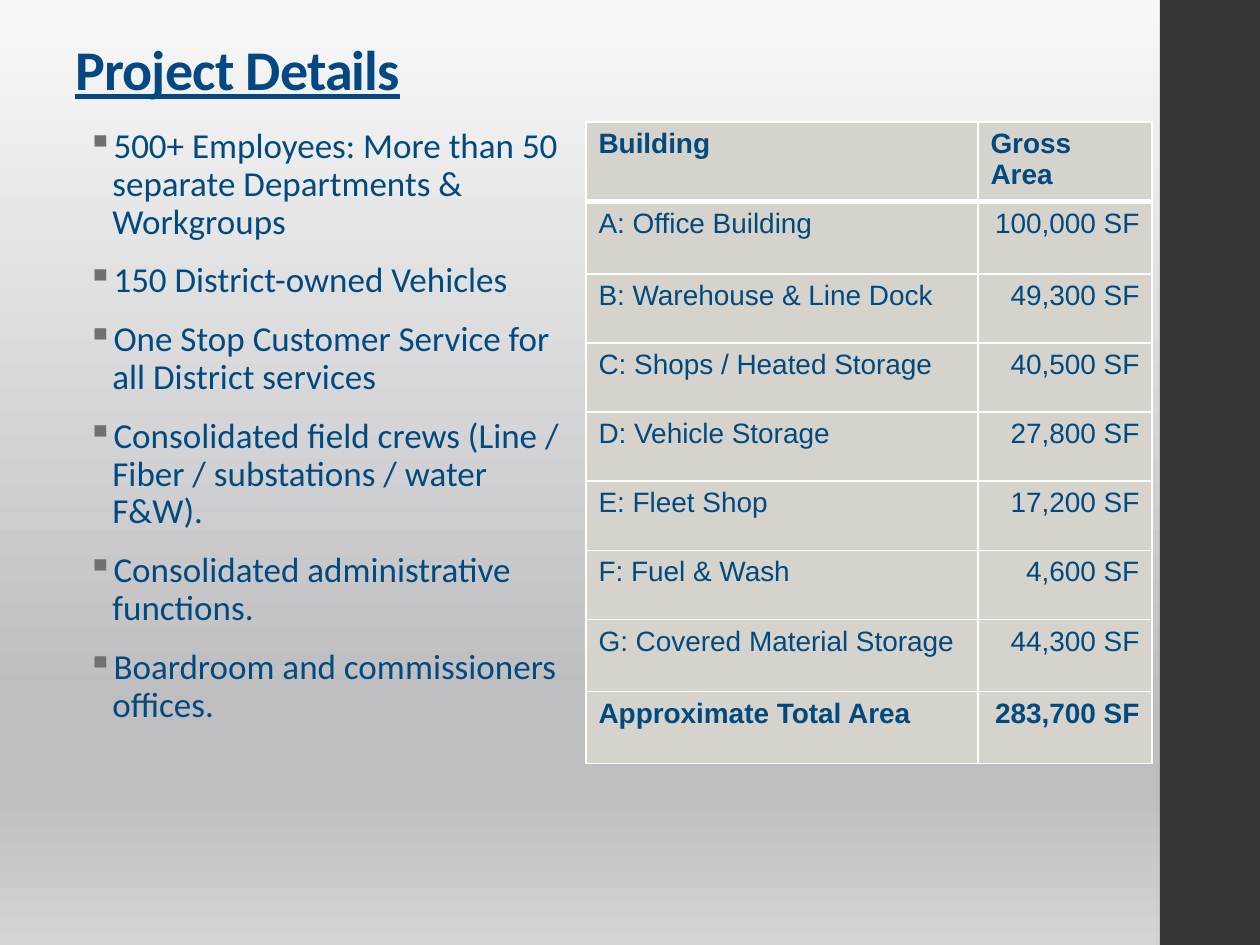
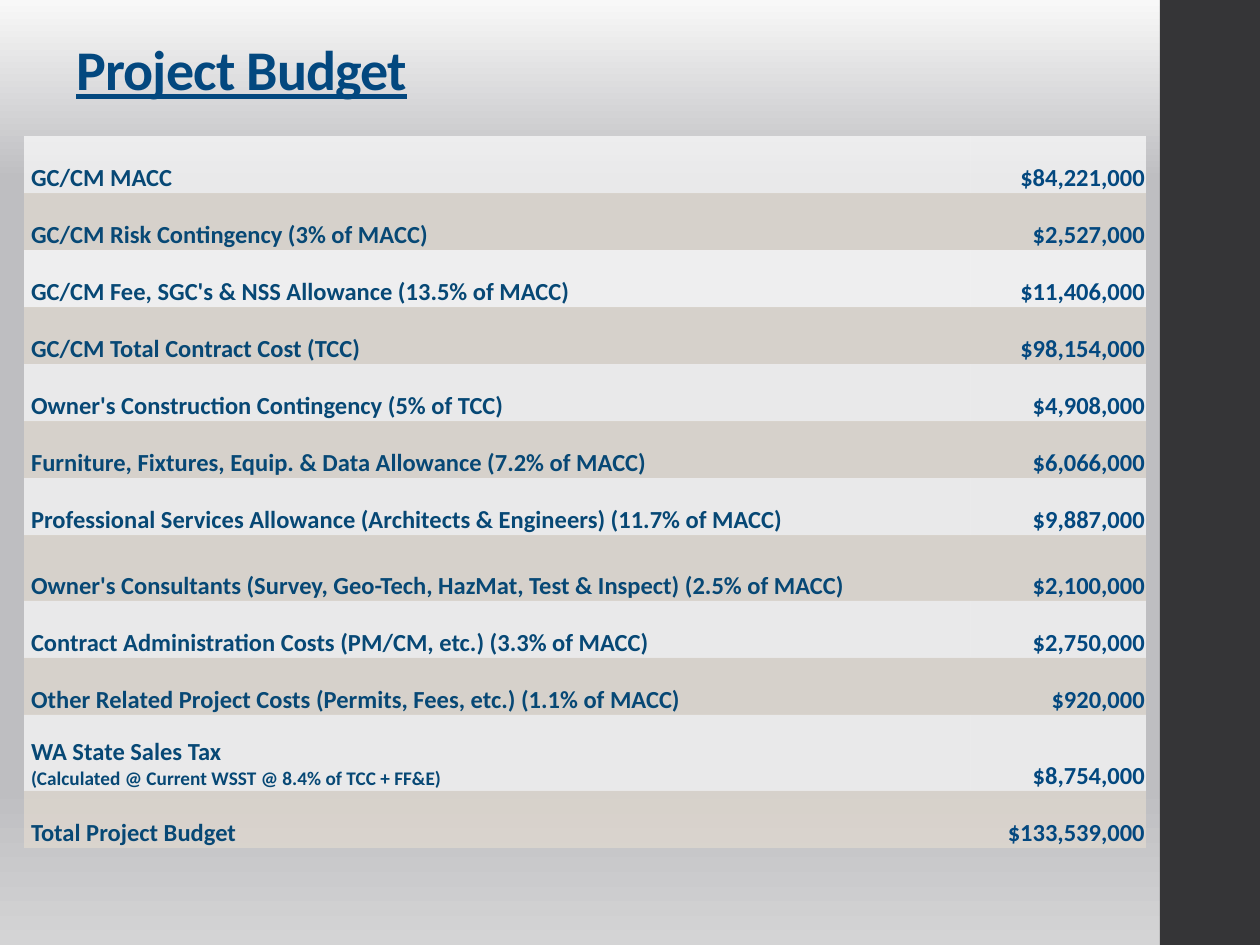
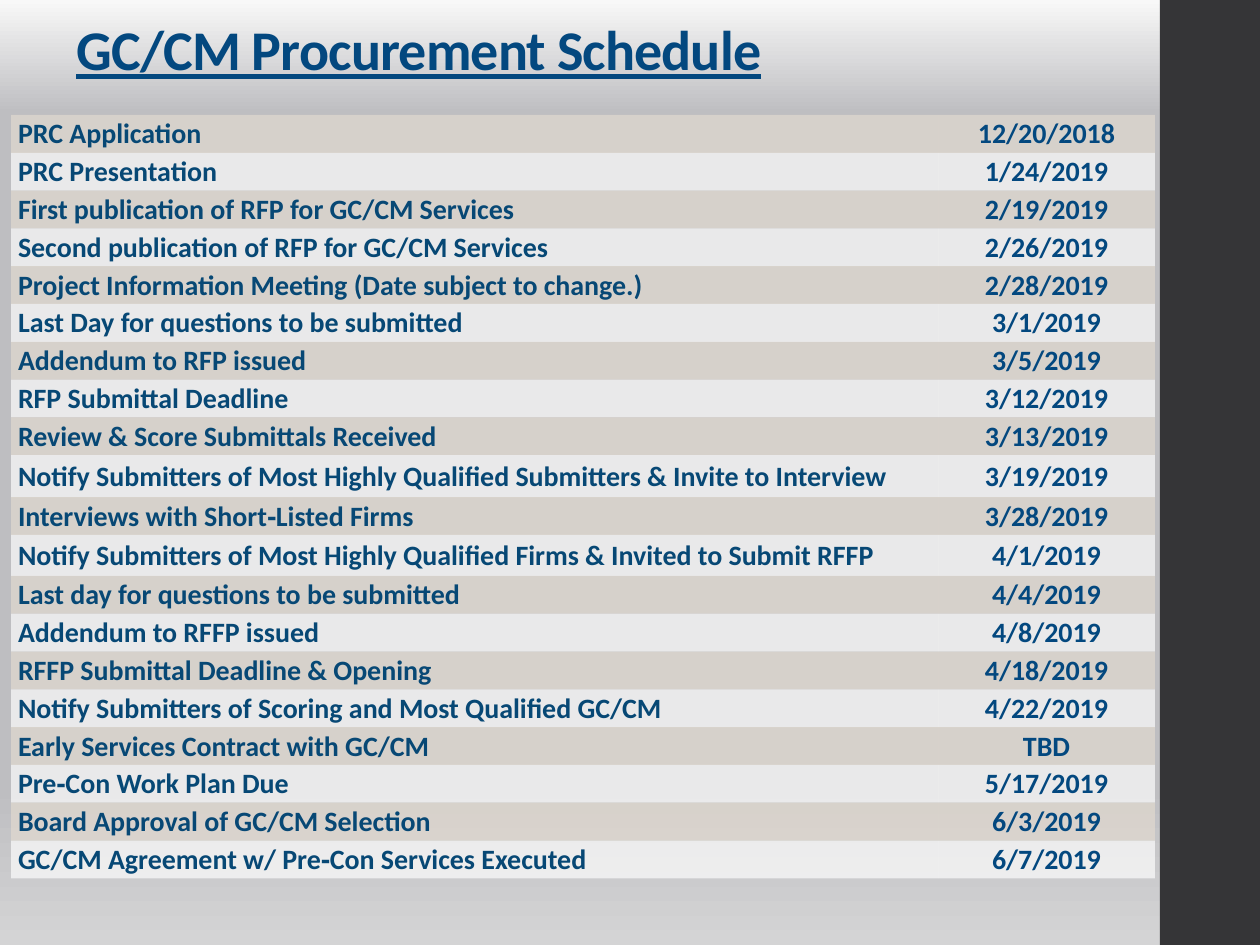
from lxml.etree import SubElement
from pptx import Presentation
from pptx.dml.color import RGBColor
from pptx.enum.shapes import MSO_SHAPE as Shape
from pptx.enum.text import MSO_ANCHOR as Anchor, PP_ALIGN as Align
from pptx.oxml.ns import qn
from pptx.util import Emu, Pt

# Content
POINTS = [
    "500+ Employees: More than 50 separate Departments & Workgroups",
    "150 District-owned Vehicles",
    "One Stop Customer Service for all District services",
    "Consolidated field crews (Line / Fiber / substations / water F&W).",
    "Consolidated administrative functions.",
    "Boardroom and commissioners offices.",
]
AREAS = [
    ("Building", "Gross Area"),
    ("A: Office Building", "100,000 SF"),
    ("B: Warehouse & Line Dock", "49,300 SF"),
    ("C: Shops / Heated Storage", "40,500 SF"),
    ("D: Vehicle Storage", "27,800 SF"),
    ("E: Fleet Shop", "17,200 SF"),
    ("F: Fuel & Wash", "4,600 SF"),
    ("G: Covered Material Storage", "44,300 SF"),
    ("Approximate Total Area", "283,700 SF"),
]
COSTS = [
    ("GC/CM MACC", "$84,221,000"),
    ("GC/CM Risk Contingency (3% of MACC)", "$2,527,000"),
    ("GC/CM Fee, SGC's & NSS Allowance (13.5% of MACC)", "$11,406,000"),
    ("GC/CM Total Contract Cost (TCC)", "$98,154,000"),
    ("Owner's Construction Contingency (5% of TCC)", "$4,908,000"),
    ("Furniture, Fixtures, Equip. & Data Allowance (7.2% of MACC)", "$6,066,000"),
    ("Professional Services Allowance (Architects & Engineers) (11.7% of MACC)", "$9,887,000"),
    ("Owner's Consultants (Survey, Geo-Tech, HazMat, Test & Inspect) (2.5% of MACC)", "$2,100,000"),
    ("Contract Administration Costs (PM/CM, etc.) (3.3% of MACC)", "$2,750,000"),
    ("Other Related Project Costs (Permits, Fees, etc.) (1.1% of MACC)", "$920,000"),
    ("WA State Sales Tax\v(Calculated @ Current WSST @ 8.4% of TCC + FF&E)", "$8,754,000"),
    ("Total Project Budget", "$133,539,000"),
]
DATES = [
    ("PRC Application", "12/20/2018"),
    ("PRC Presentation", "1/24/2019"),
    ("First publication of RFP for GC/CM Services", "2/19/2019"),
    ("Second publication of RFP for GC/CM Services", "2/26/2019"),
    ("Project Information Meeting (Date subject to change.)", "2/28/2019"),
    ("Last Day for questions to be submitted", "3/1/2019"),
    ("Addendum to RFP issued", "3/5/2019"),
    ("RFP Submittal Deadline", "3/12/2019"),
    ("Review & Score Submittals Received", "3/13/2019"),
    ("Notify Submitters of Most Highly Qualified Submitters & Invite to Interview", "3/19/2019"),
    ("Interviews with Short‐Listed Firms", "3/28/2019"),
    ("Notify Submitters of Most Highly Qualified Firms & Invited to Submit RFFP", "4/1/2019"),
    ("Last day for questions to be submitted", "4/4/2019"),
    ("Addendum to RFFP issued", "4/8/2019"),
    ("RFFP Submittal Deadline & Opening", "4/18/2019"),
    ("Notify Submitters of Scoring and Most Qualified GC/CM", "4/22/2019"),
    ("Early Services Contract with GC/CM", "TBD"),
    ("Pre‐Con Work Plan Due", "5/17/2019"),
    ("Board Approval of GC/CM Selection", "6/3/2019"),
    ("GC/CM Agreement w/ Pre‐Con Services Executed", "6/7/2019"),
]

# Shared look
COLOR = {
    "band": "353537", "head": "034882", "navy": "03487F", "body": "014A7F",
    "label": "074875", "mark": "6F6F74", "stone": "D6D3CC", "sand": "E3DBD0",
    "white": "FFFFFF", "glow": "F8F8F8", "grey": "BEBEC1", "foot": "D4D4D5",
}
WIDE, HIGH = 1260, 945
BARE = "{2D5ABB26-0587-4C30-8999-92F81FD0307C}"  # table style without grid


def px(n):
    return Emu(round(n * 914400 / 126))


def rgb(name):
    return RGBColor.from_string(COLOR[name])


def style(run, size, color, bold=False, face="Calibri"):
    font = run.font
    font.size, font.bold, font.name = Pt(size), bold, face
    font.color.rgb = rgb(color)


def text_box(slide, box):
    frame = slide.shapes.add_textbox(*map(px, box)).text_frame
    frame.word_wrap = True
    return frame


def new_slide(deck, title, box, turn, color="navy"):
    slide = deck.slides.add_slide(deck.slide_layouts[6])
    # Background fades from light to grey at the turn
    fill = slide.background.fill
    fill.gradient()
    fill.gradient_angle = 270
    stops = next(slide.element.iter(qn("a:gsLst")))
    for stop in list(stops):
        stops.remove(stop)
    for pos, name in [(0, "glow"), (turn, "grey"), (83, "grey"), (100, "foot")]:
        stop = SubElement(stops, qn("a:gs"), pos=str(pos * 1000))
        SubElement(stop, qn("a:srgbClr"), val=COLOR[name])
    # Side band
    band = slide.shapes.add_shape(Shape.RECTANGLE, *map(px, (1160, 0, WIDE - 1160, HIGH)))
    band.shadow.inherit = False
    band.fill.solid()
    band.fill.fore_color.rgb = rgb("band")
    band.line.fill.background()
    # Title
    frame = text_box(slide, box)
    frame.vertical_anchor = Anchor.BOTTOM
    frame.text = title
    para = frame.paragraphs[0]
    para.line_spacing = 0.9
    run = para.runs[0]
    style(run, 32, color, True)
    run.font.underline = True
    run.font.element.set("spc", "-50") if hasattr(run.font, "element") else run._r.get_or_add_rPr().set("spc", "-50")
    return slide


def add_points(slide, box):
    frame = text_box(slide, box)
    frame.text = "\n".join(POINTS)
    for para in frame.paragraphs:
        para.level = 1
        para.line_spacing = 0.9
        para.space_before = para.space_after = Pt(6)
        style(para.runs[0], 20, "body")
        props = para._p.get_or_add_pPr()
        props.set("marL", str(px(63)))
        props.set("indent", str(px(-25)))
        mark = SubElement(props, qn("a:buClr"))
        SubElement(mark, qn("a:srgbClr"), val=COLOR["mark"])
        SubElement(props, qn("a:buChar"), char="▪")


def add_grid(slide, rows, at, cols, high, tall):
    """Tall rows have set heights; the others share what is left."""
    rest = (high - sum(tall.values())) / (len(rows) - len(tall))
    shape = slide.shapes.add_table(len(rows), 2, *map(px, (*at, sum(cols), high)))
    next(shape.element.iter(qn("a:tableStyleId"))).text = BARE
    grid = shape.table
    grid.first_row = grid.horz_banding = False
    for col, wide in zip(grid.columns, cols):
        col.width = px(wide)
    for i, row in enumerate(rows):
        grid.rows[i].height = px(tall.get(i, rest))
        for j, text in enumerate(row):
            grid.cell(i, j).text_frame.text = text
    return grid


def paint(cell, color, alpha=100):
    cell.fill.solid()
    cell.fill.fore_color.rgb = rgb(color)
    if alpha < 100:
        tint = next(cell._tc.tcPr.iter(qn("a:srgbClr")))
        SubElement(tint, qn("a:alpha"), val=str(alpha * 1000))


def rule(cell, widths):
    props = cell._tc.get_or_add_tcPr()
    for i, (side, width) in enumerate(zip("LRTB", widths)):
        line = SubElement(props, qn("a:ln" + side), w=str(Pt(width)))
        SubElement(SubElement(line, qn("a:solidFill")), qn("a:srgbClr"), val=COLOR["white"])
        props.insert(i, line)


def area_table(slide):
    tall = dict.fromkeys((0, 1, 7, 8), 72)
    grid = add_grid(slide, AREAS, (586, 122), (392, 174), 634, tall)
    last = len(AREAS) - 1
    for i in range(len(AREAS)):
        for j in range(2):
            cell = grid.cell(i, j)
            para = cell.text_frame.paragraphs[0]
            style(para.runs[0], 16, "body", i in (0, last), "Arial")
            if i and j:
                para.alignment = Align.RIGHT
            paint(cell, "stone")
            rule(cell, (1, 1, 3 if i == 1 else 1, 3 if i == 0 else 1))


def striped(grid, fills, size, anchor, align, clear):
    for i in range(len(grid.rows)):
        for j, color in enumerate(("label", "navy")):
            cell = grid.cell(i, j)
            cell.margin_left = px(1 if j else 7)
            cell.margin_right = cell.margin_top = px(1)
            cell.margin_bottom = 0
            cell.vertical_anchor = anchor
            para = cell.text_frame.paragraphs[0]
            para.alignment = align if j else Align.LEFT
            for run, points in zip(para.runs, (size, 11)):
                style(run, points, color, True)
            paint(cell, fills[i % 2], clear.get(i, 67))


def main():
    deck = Presentation()
    deck.slide_width, deck.slide_height = px(WIDE), px(HIGH)

    # Project details
    slide = new_slide(deck, "Project Details", (63, 16, 1067, 93), 74, "head")
    add_points(slide, (37, 122, 551, 774))
    area_table(slide)

    # Project budget
    slide = new_slide(deck, "Project Budget", (64, 21, 1066, 88), 19)
    grid = add_grid(slide, COSTS, (24, 136), (947, 175), 712, {7: 66, 10: 76})
    striped(grid, ("white", "sand"), 14, Anchor.BOTTOM, Align.RIGHT, {2: 75})

    # Procurement schedule
    slide = new_slide(deck, "GC/CM Procurement Schedule", (64, 0, 1066, 89), 12)
    grid = add_grid(slide, DATES, (11, 115), (927, 217), 764, {9: 42, 11: 41})
    striped(grid, ("sand", "white"), 16, Anchor.MIDDLE, Align.CENTER, {})

    deck.save("out.pptx")


if __name__ == "__main__":
    main()
